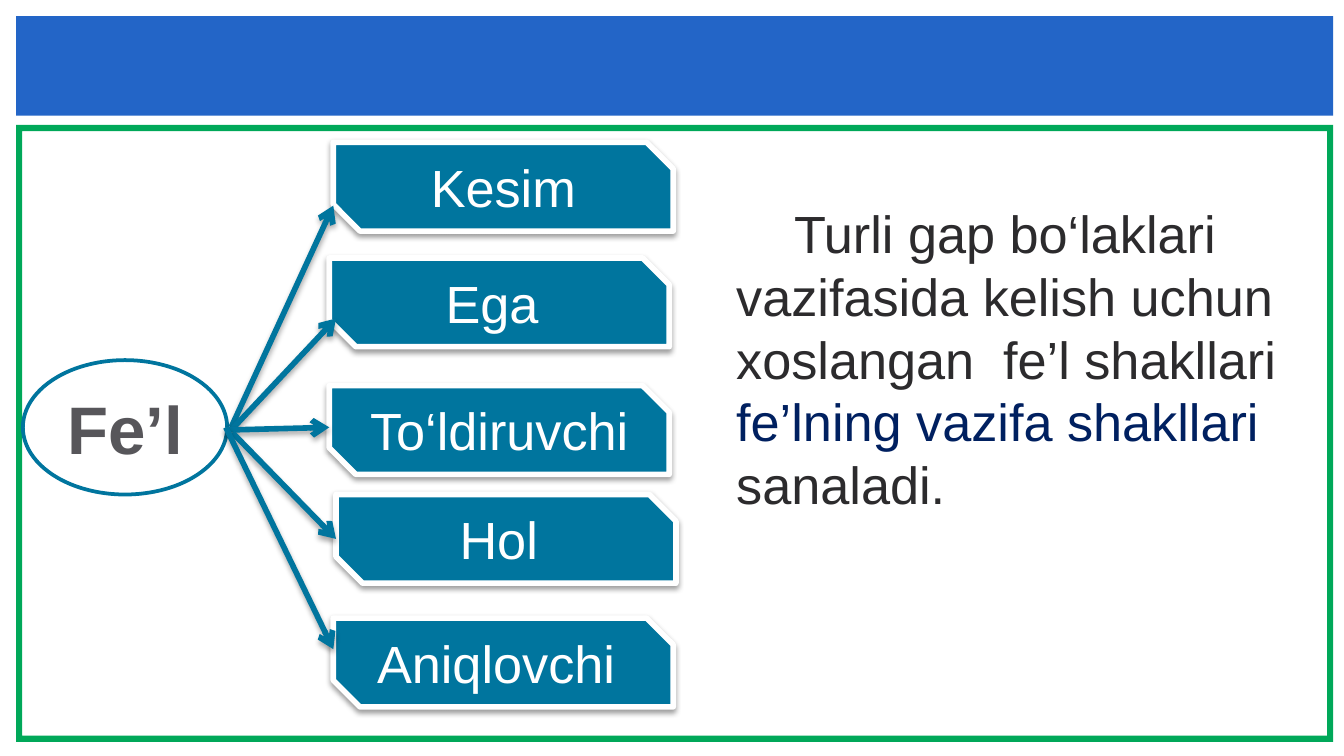
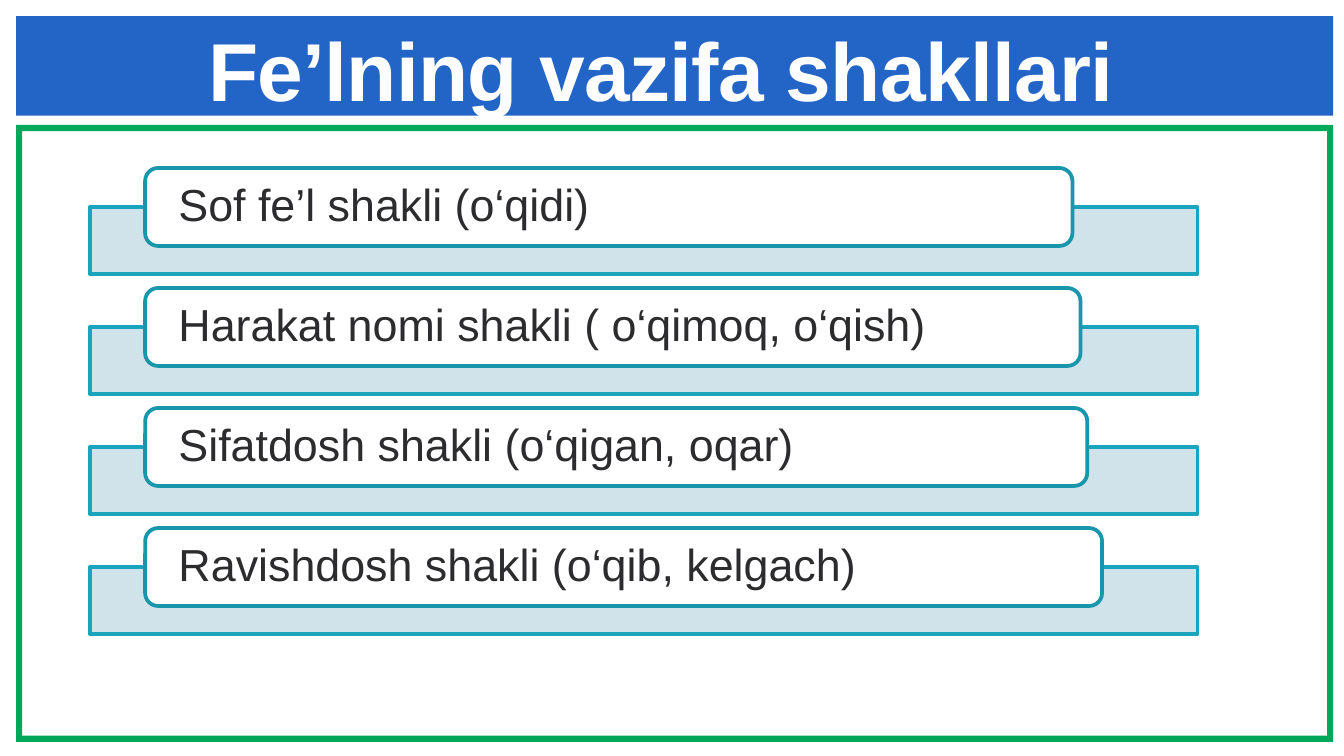
import pptx
import pptx.dml.color
import pptx.enum.shapes
import pptx.enum.text
import pptx.oxml
import pptx.oxml.ns
import pptx.util

KIND = pptx.enum.shapes.MSO_SHAPE
ALIGN = pptx.enum.text.PP_ALIGN
ANCHOR = pptx.enum.text.MSO_ANCHOR
FONT = "Arial"
COLORS = {
    "white": "FFFFFF",
    "title": "FEFEFE",
    "band": "2365C7",
    "frame": "00A859",
    "teal": "00759E",
    "verb": "57565A",
    "text": "2C2B2D",
    "accent": "002060",
    "bar": "CDE1E8",
    "bar line": "1AA5BD",
    "tab line": "1896AC",
}

deck = pptx.Presentation()
deck.slide_width = pptx.util.Inches(10)
deck.slide_height = pptx.util.Inches(5.625)

# The grid has 100 columns; its rows are as tall as the columns are wide.
CELL = deck.slide_width // 100


def add_panel(page, kind, place, fill, line=None, weight=2):
    """Add a flat shape; place is left, top, width and height in grid cells."""
    panel = page.shapes.add_shape(kind, *[int(length * CELL) for length in place])
    panel.shadow.inherit = False
    panel.fill.solid()
    panel.fill.fore_color.rgb = pptx.dml.color.RGBColor.from_string(COLORS[fill])
    if line:
        panel.line.color.rgb = pptx.dml.color.RGBColor.from_string(COLORS[line])
        panel.line.width = pptx.util.Pt(weight)
    else:
        panel.line.fill.background()
    return panel


def write(box, pieces, size, align=ALIGN.CENTER, anchor=ANCHOR.MIDDLE, bold=False):
    """Fill the box with one paragraph of (text, colour) pieces and return it."""
    box.text_frame.word_wrap = True
    box.text_frame.vertical_anchor = anchor
    para = box.text_frame.paragraphs[0]
    para.alignment = align
    for text, color in pieces:
        span = para.add_run()
        span.text = text
        span.font.name = FONT
        span.font.size = pptx.util.Pt(size)
        span.font.bold = bold
        span.font.color.rgb = pptx.dml.color.RGBColor.from_string(COLORS[color])
    return para


# Both pages: green frame and blue title band
pages = []
for number in range(2):
    page = deck.slides.add_slide(deck.slide_layouts[6])
    frame = add_panel(page, KIND.FRAME, (1.2, 9.3, 98, 45.9), "frame")
    frame.adjustments[0] = 0.01
    add_panel(page, KIND.RECTANGLE, (1.2, 1.2, 98, 7.4), "band")
    pages.append(page)
roles_page, forms_page = pages

# Page 1: the verb and the sentence parts it can be
# Each role: label, left and top of its box, start and end of its arrow
roles = [
    ("Kesim", (24.8, 10.6), (17.2, 31.8), (24.8, 15.3)),
    ("Ega ", (24.5, 19.2), (17.3, 31.9), (25, 23.7)),
    ("To‘ldiruvchi", (24.5, 28.7), (16.8, 32), (24.5, 31.8)),
    ("Hol ", (25, 36.8), (17.3, 32.2), (25, 40.1)),
    ("Aniqlovchi ", (24.8, 46), (16.8, 31.8), (24.8, 48.3)),
]
shadowed = []
for label, corner, start, end in roles:
    box = add_panel(roles_page, KIND.SNIP_2_DIAG_RECTANGLE, (*corner, 25.3, 6.6), "teal", "white", 3)
    box.adjustments[0] = 0
    box.adjustments[1] = 0.3
    write(box, [(label, "white")], 28)
    shadowed.append((box, 38, 1.6))

verb = add_panel(roles_page, KIND.OVAL, (1.7, 26.8, 15.2, 10), "white", "teal")
write(verb, [("Fe’l", "verb")], 36, bold=True)

for label, corner, start, end in roles:
    arrow = roles_page.shapes.add_connector(
        pptx.enum.shapes.MSO_CONNECTOR.STRAIGHT,
        *[int(length * CELL) for length in start + end])
    arrow.line.color.rgb = pptx.dml.color.RGBColor.from_string(COLORS["teal"])
    arrow.line.width = pptx.util.Pt(3)
    arrow.line._get_or_add_ln().append(pptx.oxml.parse_xml(
        f'<a:tailEnd {pptx.oxml.ns.nsdecls("a")} type="arrow"/>'))
    shadowed.append((arrow, 35, 1.8))

for item, opacity, distance in shadowed:
    properties = item._element.spPr
    for effects in properties.findall(pptx.oxml.ns.qn("a:effectLst")):
        properties.remove(effects)
    properties.append(pptx.oxml.parse_xml(
        f'<a:effectLst {pptx.oxml.ns.nsdecls("a")}>'
        f'<a:outerShdw blurRad="{pptx.util.Pt(3.1)}" dist="{pptx.util.Pt(distance)}"'
        ' dir="5400000" rotWithShape="0"><a:srgbClr val="000000">'
        f'<a:alpha val="{opacity * 1000}"/></a:srgbClr></a:outerShdw></a:effectLst>'))

definition = add_panel(roles_page, KIND.RECTANGLE, (53.8, 14.5, 42.7, 24.6), "white", "white")
para = write(definition, [
    ("Turli gap bo‘laklari vazifasida kelish uchun xoslangan  fe’l shakllari ", "text"),
    ("fe’lning vazifa shakllari ", "accent"),
    ("sanaladi.", "text"),
], 28, ALIGN.LEFT, ANCHOR.TOP)
para._p.get_or_add_pPr().set("indent", str(int(4.3 * CELL)))
definition.text_frame.auto_size = pptx.enum.text.MSO_AUTO_SIZE.SHAPE_TO_FIT_TEXT

# Page 2: title and the four forms
title = forms_page.shapes.add_textbox(*[int(length * CELL) for length in (7.5, 2.3, 85, 6.7)])
for side in ("left", "top", "right", "bottom"):
    setattr(title.text_frame, f"margin_{side}", 0)
para = write(title, [("Fe’lning vazifa shakllari ", "title")], 44, bold=True)
para.line_spacing = 0.86
para.runs[0].font._element.set("spc", "-40")

forms = [
    ("Sof fe’l shakli (o‘qidi)", 69),
    ("Harakat nomi shakli ( o‘qimoq, o‘qish)", 69.6),
    ("Sifatdosh shakli (o‘qigan, oqar)", 70.1),
    ("Ravishdosh shakli (o‘qib, kelgach)", 71.2),
]
for row, (label, width) in enumerate(forms):
    top = 12.5 + 8.93 * row
    bar = add_panel(forms_page, KIND.RECTANGLE, (6.7, top + 2.9, 82.4, 5), "bar", "bar line")
    bar_color = bar._element.spPr.find(".//" + pptx.oxml.ns.qn("a:srgbClr"))
    bar_color.append(pptx.oxml.parse_xml(
        f'<a:alpha {pptx.oxml.ns.nsdecls("a")} val="90000"/>'))
    tab = add_panel(forms_page, KIND.ROUNDED_RECTANGLE, (10.8, top, width, 5.8), "white", "tab line")
    tab.text_frame.margin_left = tab.text_frame.margin_right = int(2.2 * CELL)
    tab.text_frame.margin_top = tab.text_frame.margin_bottom = 0
    para = write(tab, [(label, "text")], 24, ALIGN.LEFT)
    para.line_spacing = 0.9

deck.save("out.pptx")
